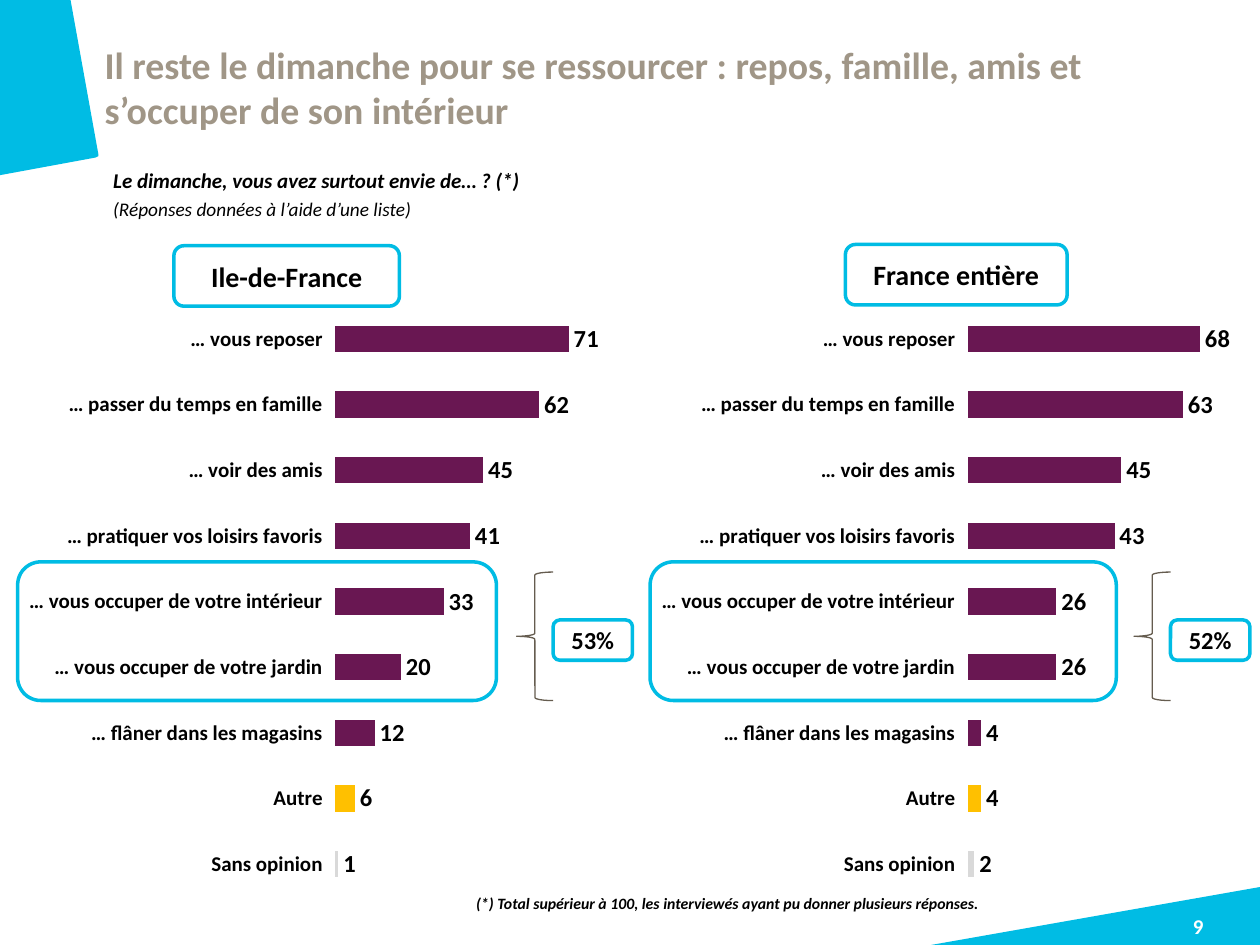
from lxml import etree
from pptx import Presentation
from pptx.chart.data import CategoryChartData
from pptx.dml.color import RGBColor
from pptx.enum.chart import XL_CHART_TYPE as CT, XL_LABEL_POSITION as LP, XL_TICK_LABEL_POSITION as TL, XL_TICK_MARK as TM
from pptx.enum.shapes import MSO_SHAPE as SH
from pptx.enum.text import MSO_ANCHOR as MA, MSO_AUTO_SIZE as AS, PP_ALIGN as AL
from pptx.oxml.ns import qn
from pptx.util import Inches, Pt

FONT = "Calibri"
CYAN, PLUM, GOLD, GREY = "00BCE4", "691752", "FFC000", "D9D9D9"
TAUPE, BROWN, BLACK, WHITE = "A09687", "655C4F", "000000", "FFFFFF"

TITLE = "Il reste le dimanche pour se ressourcer : repos, famille, amis et s’occuper de son intérieur"
QUESTION = [("Le dimanche, vous avez surtout envie de…\u00a0? (*)", 12, True),
            ("(Réponses données à l’aide d’une liste)", 11, False)]
NOTE = "(*) Total supérieur à 100, les interviewés ayant pu donner plusieurs réponses."
CATEGORIES = ["… vous reposer", "… passer du temps en famille", "… voir des amis",
              "… pratiquer vos loisirs favoris", "… vous occuper de votre intérieur",
              "… vous occuper de votre jardin", "… flâner dans les magasins",
              "Autre", "Sans opinion"]
POINT_COLORS = {7: GOLD, 8: GREY}
PANELS = [
    dict(name="Ile-de-France", values=[71, 62, 45, 41, 33, 20, 12, 6, 1], total="53%",
         chart=(0.14, 2.33, 4.71, 4.88), plot=(2.66, 2.43, 2.09, 4.69),
         label=(1.38, 1.95, 1.79, 0.48), frame=(0.14, 4.46, 3.8, 1.1), brace=4.1),
    dict(name="France entière", values=[68, 63, 45, 43, 26, 26, 4, 4, 2], total="52%",
         chart=(5.16, 2.33, 4.79, 4.88), plot=(7.68, 2.43, 2.17, 4.69),
         label=(6.71, 1.94, 1.76, 0.48), frame=(5.16, 4.46, 3.7, 1.1), brace=9),
]
CORNERS = [
    [(0, 0), (0.56, 0), (0.78, 1.22), (0.78, 1.24), (0.76, 1.25), (0, 1.39)],
    [(7.39, 7.5), (10, 7.04), (10, 7.5)],
]


def rgb(color):
    return RGBColor.from_string(color)


def box(values):
    return [Inches(v) for v in values]


def style(font, size, color=BLACK, bold=True, italic=False):
    font.name, font.size, font.bold, font.italic = FONT, Pt(size), bold, italic
    font.color.rgb = rgb(color)


def write(p, text, size, color=BLACK, bold=True, italic=False, align=AL.LEFT):
    p.alignment = align
    r = p.add_run()
    r.text = text
    style(r.font, size, color, bold, italic)


def no_margins(tf):
    tf.margin_left = tf.margin_right = tf.margin_top = tf.margin_bottom = 0


def add_text(slide, at):
    tf = slide.shapes.add_textbox(*box(at)).text_frame
    tf.word_wrap = True
    return tf


def add_outline(slide, kind, at, color=CYAN, width=2, text=None, size=14):
    sp = slide.shapes.add_shape(kind, *box(at))
    sp.shadow.inherit = False
    sp.fill.background()
    sp.line.color.rgb = rgb(color)
    sp.line.width = Pt(width)
    if text:
        tf = sp.text_frame
        tf.word_wrap = True
        tf.vertical_anchor = MA.MIDDLE
        write(tf.paragraphs[0], text, size, align=AL.CENTER)


def add_corner(slide, points):
    points = [box(pt) for pt in points]
    fb = slide.shapes.build_freeform(*points[0])
    fb.add_line_segments(points[1:], close=True)
    sp = fb.convert_to_shape()
    sp.shadow.inherit = False
    sp.fill.solid()
    sp.fill.fore_color.rgb = rgb(CYAN)
    sp.line.fill.background()


def place_plot(chart, at, plot):
    area = chart._chartSpace.chart.plotArea
    for old in area.findall(qn("c:layout")):
        area.remove(old)
    layout = etree.Element(qn("c:layout"))
    manual = etree.SubElement(layout, qn("c:manualLayout"))
    x, y, w, h = at
    px, py, pw, ph = plot
    settings = [("layoutTarget", "inner"), ("xMode", "edge"), ("yMode", "edge"),
                ("x", (px - x) / w), ("y", (py - y) / h), ("w", pw / w), ("h", ph / h)]
    for tag, value in settings:
        etree.SubElement(manual, qn("c:" + tag)).set("val", str(value))
    area.insert(0, layout)


def add_bars(slide, values, at, plot):
    data = CategoryChartData()
    data.categories = CATEGORIES
    data.add_series("Series 1", values)
    chart = slide.shapes.add_chart(CT.BAR_CLUSTERED, *box(at), data).chart
    chart.has_legend = chart.has_title = False
    style(chart.font, 18, TAUPE, False)
    cat, val = chart.category_axis, chart.value_axis
    cat.reverse_order = True
    cat.major_tick_mark = TM.NONE
    cat.tick_label_position = TL.LOW
    cat.format.line.fill.background()
    style(cat.tick_labels.font, 12)
    val.visible = val.has_major_gridlines = False
    val.minimum_scale, val.maximum_scale = 0, 80
    bars = chart.plots[0]
    bars.gap_width = 150
    bars.vary_by_categories = False
    series = bars.series[0]
    series.format.fill.solid()
    series.format.fill.fore_color.rgb = rgb(PLUM)
    for i, color in POINT_COLORS.items():
        fill = series.points[i].format.fill
        fill.solid()
        fill.fore_color.rgb = rgb(color)
    labels = series.data_labels
    labels.show_value = True
    labels.position = LP.OUTSIDE_END
    style(labels.font, 14)
    place_plot(chart, at, plot)


def main():
    prs = Presentation()
    prs.slide_width, prs.slide_height = Inches(10), Inches(7.5)
    slide = prs.slides.add_slide(prs.slide_layouts[5])

    for points in CORNERS:
        add_corner(slide, points)

    title = slide.shapes.title
    title.left, title.top, title.width, title.height = box((0.83, 0.33, 8.98, 0.49))
    tf = title.text_frame
    tf.word_wrap = True
    tf.auto_size = AS.NONE
    tf.vertical_anchor = MA.TOP
    no_margins(tf)
    write(tf.paragraphs[0], TITLE, 21.6, TAUPE)

    tf = add_text(slide, (0.8, 1.28, 8.93, 0.3))
    for i, (text, size, bold) in enumerate(QUESTION):
        p = tf.add_paragraph() if i else tf.paragraphs[0]
        if i:
            p.space_before = Pt(2.4)
        write(p, text, size, bold=bold, italic=True, align=AL.JUSTIFY)

    for panel in PANELS:
        brace = panel["brace"]
        add_bars(slide, panel["values"], panel["chart"], panel["plot"])
        add_outline(slide, SH.ROUNDED_RECTANGLE, panel["frame"])
        add_outline(slide, SH.LEFT_BRACE, (brace, 4.54, 0.29, 1.02), BROWN, 0.75)
        add_outline(slide, SH.ROUNDED_RECTANGLE, (brace + 0.29, 4.92, 0.63, 0.32), text=panel["total"])
        add_outline(slide, SH.ROUNDED_RECTANGLE, panel["label"], text=panel["name"], size=16)

    tf = add_text(slide, (2.44, 7.04, 5.42, 0.25))
    write(tf.paragraphs[0], NOTE, 9, italic=True, align=AL.RIGHT)

    tf = add_text(slide, (9.02, 7.25, 0.98, 0.25))
    no_margins(tf)
    write(tf.paragraphs[0], "9", 12, WHITE, align=AL.CENTER)

    prs.save("out.pptx")


if __name__ == "__main__":
    main()
